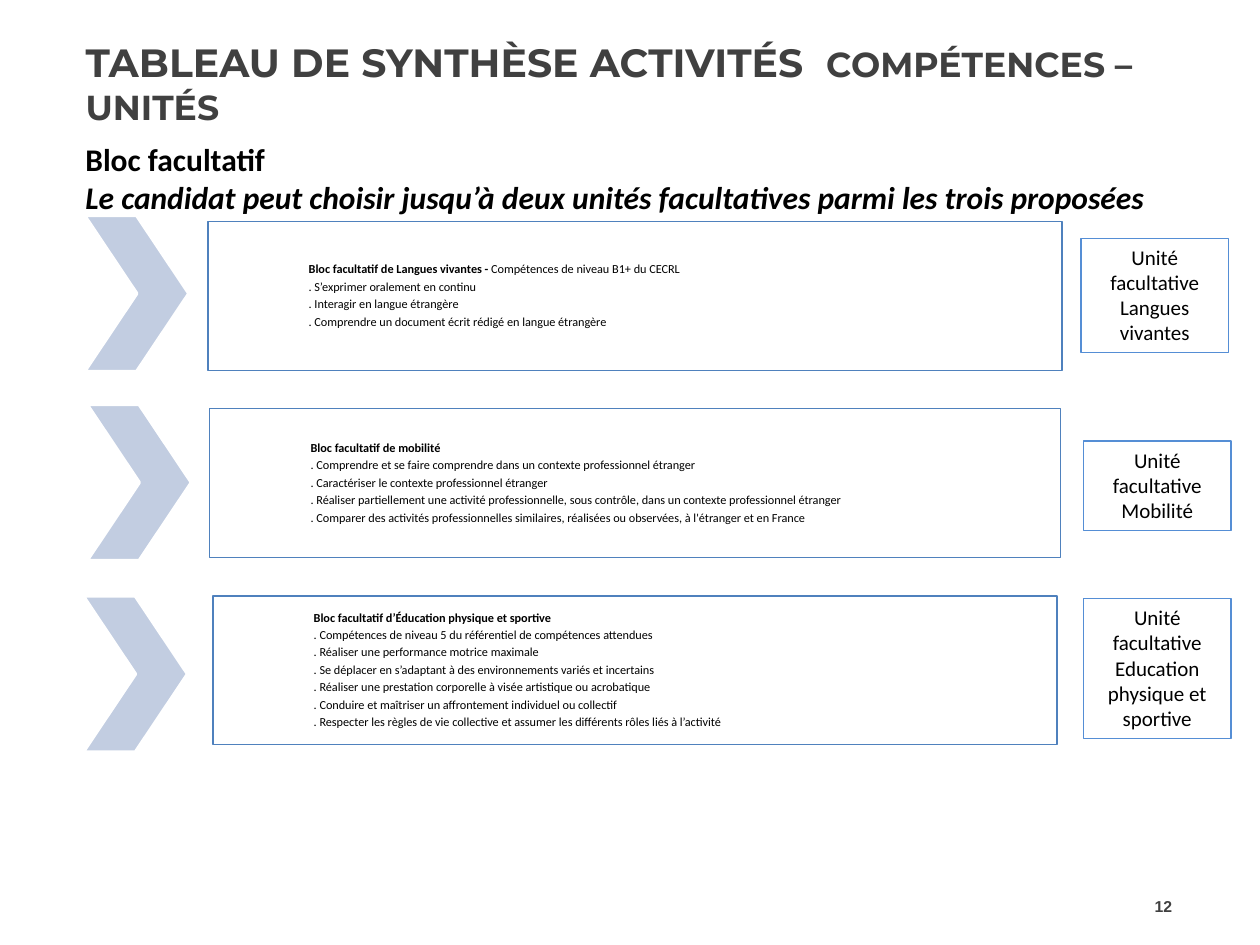
"""Build the summary slide of the optional block and its three units."""
import dataclasses

import lxml.etree
import pptx
import pptx.dml.color
import pptx.enum.shapes
import pptx.enum.text
import pptx.oxml.ns
import pptx.util

ALIGN = pptx.enum.text.PP_ALIGN
ANCHOR = pptx.enum.text.MSO_ANCHOR
AUTO_SIZE = pptx.enum.text.MSO_AUTO_SIZE
SHAPE = pptx.enum.shapes.MSO_SHAPE


@dataclasses.dataclass(frozen=True)
class Theme:
    heading_font: str = "Montserrat"
    body_font: str = "Calibri"
    number_font: str = "Arial"
    heading: str = "404040"
    ink: str = "000000"
    paper: str = "FFFFFF"
    frame: str = "4F81BD"
    unit: str = "558ED5"
    chevron: str = "C2CDE1"
    title_size: float = 22.5
    title_end_size: float = 19.8
    subtitle_size: float = 18
    unit_size: float = 12
    number_size: float = 9
    skill_size: float = 7


BLOCKS = [
    dict(
        heading="Bloc facultatif de Langues vivantes - ",
        level="Compétences de niveau B1+ du CECRL",
        skills=[
            ". S’exprimer oralement en continu",
            ". Interagir en langue étrangère",
            ". Comprendre un document écrit rédigé en langue étrangère",
        ],
        width=67.8,
        chevron=(6.7, 17.1),
        unit="Unité facultative Langues vivantes",
        unit_area=(85.8, 18.9, 11.7, 9.1),
    ),
    dict(
        heading="Bloc facultatif de mobilité",
        level="",
        skills=[
            ". Comprendre et se faire comprendre dans un contexte professionnel étranger",
            ". Caractériser le contexte professionnel étranger",
            ". Réaliser partiellement une activité professionnelle, sous contrôle, dans un contexte professionnel étranger",
            ". Comparer des activités professionnelles similaires, réalisées ou observées, à l'étranger et en France",
        ],
        width=67.5,
        chevron=(6.9, 32.1),
        unit="Unité facultative Mobilité",
        unit_area=(86, 35, 11.7, 7.1),
    ),
    dict(
        heading="Bloc facultatif d’Éducation physique et sportive",
        level="",
        skills=[
            ". Compétences de niveau 5 du référentiel de compétences attendues",
            ". Réaliser une performance motrice maximale",
            ". Se déplacer en s’adaptant à des environnements variés et incertains",
            ". Réaliser une prestation corporelle à visée artistique ou acrobatique",
            ". Conduire et maîtriser un affrontement individuel ou collectif",
            ". Respecter les règles de vie collective et assumer les différents rôles liés à l’activité",
        ],
        width=67,
        chevron=(6.6, 47.3),
        unit="Unité facultative Education physique et sportive",
        unit_area=(86, 47.5, 11.7, 11.1),
    ),
]


def color(value):
    return pptx.dml.color.RGBColor.from_string(value)


def write_text(paragraph, text, *, size, font, ink, bold=False, italic=False):
    run = paragraph.add_run()
    run.text = text
    run.font.size = pptx.util.Pt(size)
    run.font.name = font
    run.font.bold = bold
    run.font.italic = italic
    run.font.color.rgb = color(ink)


class SlideBuilder:
    columns = 100
    rows = 75
    block_center = 50.4
    first_block_row = 17.6
    block_pitch = 14.85
    block_height = 11.8

    def __init__(self, presentation, theme):
        self.theme = theme
        self.column = presentation.slide_width / self.columns
        self.row = presentation.slide_height / self.rows
        self.slide = presentation.slides.add_slide(presentation.slide_layouts[5])

    def area(self, left, top, width, height):
        return (
            round(left * self.column),
            round(top * self.row),
            round(width * self.column),
            round(height * self.row),
        )

    def shape(self, kind, area, *, fill=None, opacity=100, line, line_width):
        shape = self.slide.shapes.add_shape(kind, *self.area(*area))
        shape.shadow.inherit = False
        if fill:
            shape.fill.solid()
            shape.fill.fore_color.rgb = color(fill)
        else:
            shape.fill.background()
        if opacity < 100:
            tone = shape.fill._xPr.find(".//" + pptx.oxml.ns.qn("a:srgbClr"))
            alpha = lxml.etree.SubElement(tone, pptx.oxml.ns.qn("a:alpha"))
            alpha.set("val", str(opacity * 1000))
        shape.line.color.rgb = color(line)
        shape.line.width = pptx.util.Pt(line_width)
        return shape

    def text_box(self, area):
        frame = self.slide.shapes.add_textbox(*self.area(*area)).text_frame
        frame.word_wrap = True
        return frame

    def title(self, area, start, end):
        title = self.slide.shapes.title
        title.left, title.top, title.width, title.height = self.area(*area)
        frame = title.text_frame
        frame.auto_size = AUTO_SIZE.NONE
        frame.vertical_anchor = ANCHOR.BOTTOM
        frame.margin_top = 0
        frame.margin_bottom = pptx.util.Inches(0.2)
        paragraph = frame.paragraphs[0]
        paragraph.alignment = ALIGN.LEFT
        style = dict(font=self.theme.heading_font, ink=self.theme.heading, bold=True)
        write_text(paragraph, start, size=self.theme.title_size, **style)
        write_text(paragraph, end, size=self.theme.title_end_size, **style)

    def subtitle(self, area, heading, rule):
        frame = self.text_box(area)
        style = dict(size=self.theme.subtitle_size, font=self.theme.body_font, ink=self.theme.ink, bold=True)
        write_text(frame.paragraphs[0], heading, **style)
        write_text(frame.add_paragraph(), rule, italic=True, **style)

    def number(self, area, text):
        frame = self.text_box(area)
        frame.vertical_anchor = ANCHOR.MIDDLE
        paragraph = frame.paragraphs[0]
        paragraph.alignment = ALIGN.RIGHT
        write_text(paragraph, text, size=self.theme.number_size, font=self.theme.number_font,
                   ink=self.theme.heading, bold=True)

    def skills(self, index, heading, level, skills, width):
        area = (self.block_center - width / 2, self.first_block_row + index * self.block_pitch,
                width, self.block_height)
        frame = self.shape(SHAPE.RECTANGLE, area, fill=self.theme.paper, opacity=40,
                           line=self.theme.frame, line_width=0.75).text_frame
        frame.word_wrap = True
        frame.vertical_anchor = ANCHOR.MIDDLE
        frame.margin_left = pptx.util.Inches(0.8)
        frame.margin_top = frame.margin_right = frame.margin_bottom = pptx.util.Inches(0.03)
        style = dict(size=self.theme.skill_size, font=self.theme.body_font, ink=self.theme.ink)
        write_text(frame.paragraphs[0], heading, bold=True, **style)
        if level:
            write_text(frame.paragraphs[0], level, **style)
        for skill in skills:
            write_text(frame.add_paragraph(), skill, **style)
        for paragraph in frame.paragraphs:
            paragraph.alignment = ALIGN.LEFT
            paragraph.line_spacing = 0.9
            paragraph.space_after = pptx.util.Pt(2.4)

    def chevron(self, left, top):
        self.shape(SHAPE.CHEVRON, (left, top, 8.3, 12.4), fill=self.theme.chevron,
                   line=self.theme.paper, line_width=2)

    def unit(self, area, text):
        frame = self.shape(SHAPE.RECTANGLE, area, line=self.theme.unit, line_width=0.75).text_frame
        frame.word_wrap = True
        frame.auto_size = AUTO_SIZE.SHAPE_TO_FIT_TEXT
        frame.vertical_anchor = ANCHOR.TOP
        paragraph = frame.paragraphs[0]
        paragraph.alignment = ALIGN.CENTER
        write_text(paragraph, text, size=self.theme.unit_size, font=self.theme.body_font, ink=self.theme.ink)


def main():
    presentation = pptx.Presentation()
    presentation.slide_width = pptx.util.Inches(10)
    presentation.slide_height = pptx.util.Inches(7.5)
    builder = SlideBuilder(presentation, Theme())
    builder.number((89.1, 69.9, 4.9, 4), "12")
    builder.title((5.8, 4.4, 89.2, 7.7), "TABLEAU DE SYNTHÈSE ACTIVITÉS  ", "COMPÉTENCES – UNITÉS")
    for index, block in enumerate(BLOCKS):
        builder.skills(index, block["heading"], block["level"], block["skills"], block["width"])
        builder.chevron(*block["chevron"])
        builder.unit(block["unit_area"], block["unit"])
    builder.subtitle((5.8, 10.6, 90, 7.1), "Bloc facultatif",
                     "Le candidat peut choisir jusqu’à deux unités facultatives parmi les trois proposées")
    presentation.save("out.pptx")


if __name__ == "__main__":
    main()
